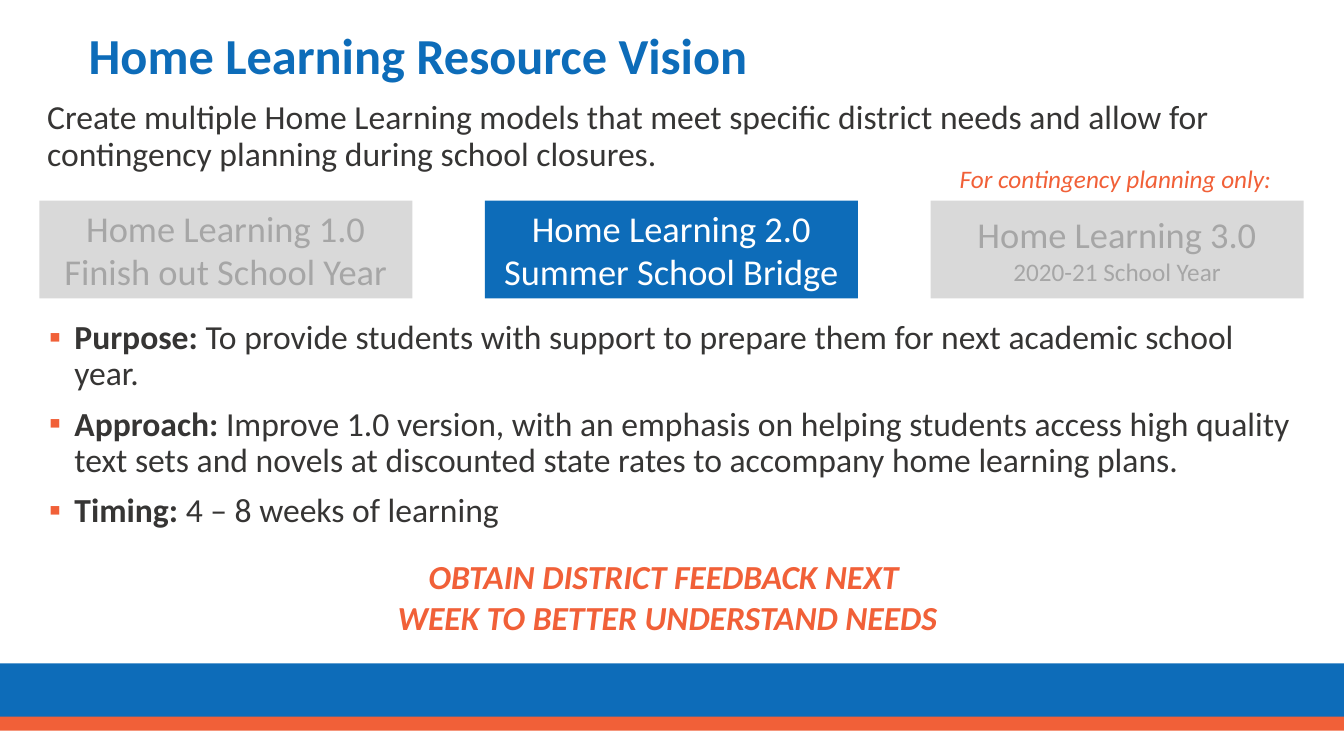
from dataclasses import dataclass

from lxml.etree import SubElement
from pptx import Presentation
from pptx.dml.color import RGBColor
from pptx.enum.shapes import MSO_SHAPE
from pptx.enum.text import MSO_ANCHOR, MSO_AUTO_SIZE, PP_ALIGN
from pptx.oxml.ns import qn
from pptx.util import Inches, Pt

COLORS = {
    "blue": "0D6CB9",
    "orange": "F16038",
    "ink": "363534",
    "pale": "D9D9D9",
    "muted": "A6A6A6",
    "white": "FFFFFF",
}


@dataclass(frozen=True)
class Span:
    text: str
    size: float | None = None
    bold: bool | None = None


@dataclass(frozen=True)
class Band:
    top: float
    height: float
    fill: str


@dataclass(frozen=True)
class Phase:
    name: str
    period: str
    period_size: float
    fill: str
    color: str


BANDS = [Band(6.58, 0.58, "blue"), Band(7.11, 0.14, "orange")]

PHASES = [
    Phase("Home Learning 1.0", "Finish out School Year", 26, "pale", "muted"),
    Phase("Home Learning 2.0", "Summer School Bridge", 26, "blue", "white"),
    Phase("Home Learning 3.0", "2020-21 School Year", 18, "pale", "muted"),
]
PHASE_LEFT, PHASE_PITCH = 0.39, 4.42

DETAILS = [
    ("Purpose:", " To provide students with support to prepare them for next academic school year."),
    ("Approach:", " Improve 1.0 version, with an emphasis on helping students access high quality "
     "text sets and novels at discounted state rates to accompany home learning plans."),
    ("Timing:", " 4 – 8 weeks of learning"),
]


def rgb(name: str) -> RGBColor:
    return RGBColor.from_string(COLORS[name])


def add_bullet(para, color: str) -> None:
    properties = para._p.get_or_add_pPr()
    properties.set("marL", str(Inches(0.25)))
    properties.set("indent", str(Inches(-0.25)))
    bullet_color = SubElement(properties, qn("a:buClr"))
    SubElement(bullet_color, qn("a:srgbClr"), val=COLORS[color])
    SubElement(properties, qn("a:buFont"), typeface="Calibri")
    SubElement(properties, qn("a:buChar"), char="▪")


def write(shape, paragraphs: list[list[Span]], *, color: str, size: float = 24,
          bold: bool = False, italic: bool = False, align=PP_ALIGN.LEFT,
          anchor=MSO_ANCHOR.TOP, spacing: float = 1.0, gap: float = 0,
          bullet: str | None = None, wrap: bool = True) -> None:
    frame = shape.text_frame
    frame.word_wrap = wrap
    frame.auto_size = MSO_AUTO_SIZE.NONE
    frame.vertical_anchor = anchor
    for index, spans in enumerate(paragraphs):
        para = frame.add_paragraph() if index else frame.paragraphs[0]
        if bullet:
            add_bullet(para, bullet)
        para.alignment = align
        para.line_spacing = spacing
        para.space_before = Pt(gap if index else 0)
        for span in spans:
            for line_index, line in enumerate(span.text.split("\n")):
                if line_index:
                    para.add_line_break()
                run = para.add_run()
                run.text = line
                run.font.name = "Calibri"
                run.font.size = Pt(span.size or size)
                run.font.bold = bold if span.bold is None else span.bold
                run.font.italic = italic
                run.font.color.rgb = rgb(color)


def add_rectangle(page, left: float, top: float, width: float, height: float, fill: str):
    shape = page.shapes.add_shape(
        MSO_SHAPE.RECTANGLE, Inches(left), Inches(top), Inches(width), Inches(height))
    shape.shadow.inherit = False
    shape.fill.solid()
    shape.fill.fore_color.rgb = rgb(fill)
    shape.line.fill.background()
    return shape


def add_box(page, left: float, top: float, width: float, height: float):
    return page.shapes.add_textbox(Inches(left), Inches(top), Inches(width), Inches(height))


def add_phase(page, left: float, phase: Phase) -> None:
    shape = add_rectangle(page, left, 1.99, 3.7, 0.97, phase.fill)
    write(shape, [[Span(phase.name)], [Span(phase.period, phase.period_size)]],
          color=phase.color, size=26, align=PP_ALIGN.CENTER, anchor=MSO_ANCHOR.MIDDLE)


def main() -> None:
    deck = Presentation()
    deck.slide_width, deck.slide_height = Inches(13.33), Inches(7.5)
    page = deck.slides.add_slide(deck.slide_layouts[5])

    for band in BANDS:
        add_rectangle(page, 0, band.top, 13.33, band.height, band.fill)

    title = page.shapes.title
    title.left, title.top = Inches(0.78), Inches(0.17)
    title.width, title.height = Inches(12.16), Inches(0.82)
    write(title, [[Span("Home Learning Resource Vision")]], color="blue", size=36,
          bold=True, anchor=MSO_ANCHOR.MIDDLE, spacing=0.9)

    for index, phase in enumerate(PHASES):
        add_phase(page, PHASE_LEFT + index * PHASE_PITCH, phase)

    write(add_box(page, 0.39, 3.13, 12.57, 4.08),
          [[Span(label, bold=True), Span(text)] for label, text in DETAILS],
          color="ink", spacing=0.9, gap=10, bullet="orange")

    write(add_box(page, 0.37, 0.95, 12.57, 1.03),
          [[Span("Create multiple Home Learning models that meet specific district needs "
                 "and allow for contingency planning during school closures.")]],
          color="ink", spacing=0.9)

    write(add_box(page, 1.7, 5.47, 9.84, 0.91),
          [[Span("OBTAIN DISTRICT FEEDBACK NEXT \nWEEK TO BETTER UNDERSTAND NEEDS")]],
          color="orange", bold=True, italic=True, align=PP_ALIGN.CENTER)

    write(add_box(page, 9.42, 1.57, 3.32, 0.4), [[Span("For contingency planning only:")]],
          color="orange", size=18, italic=True, wrap=False)

    deck.save("out.pptx")


if __name__ == "__main__":
    main()
